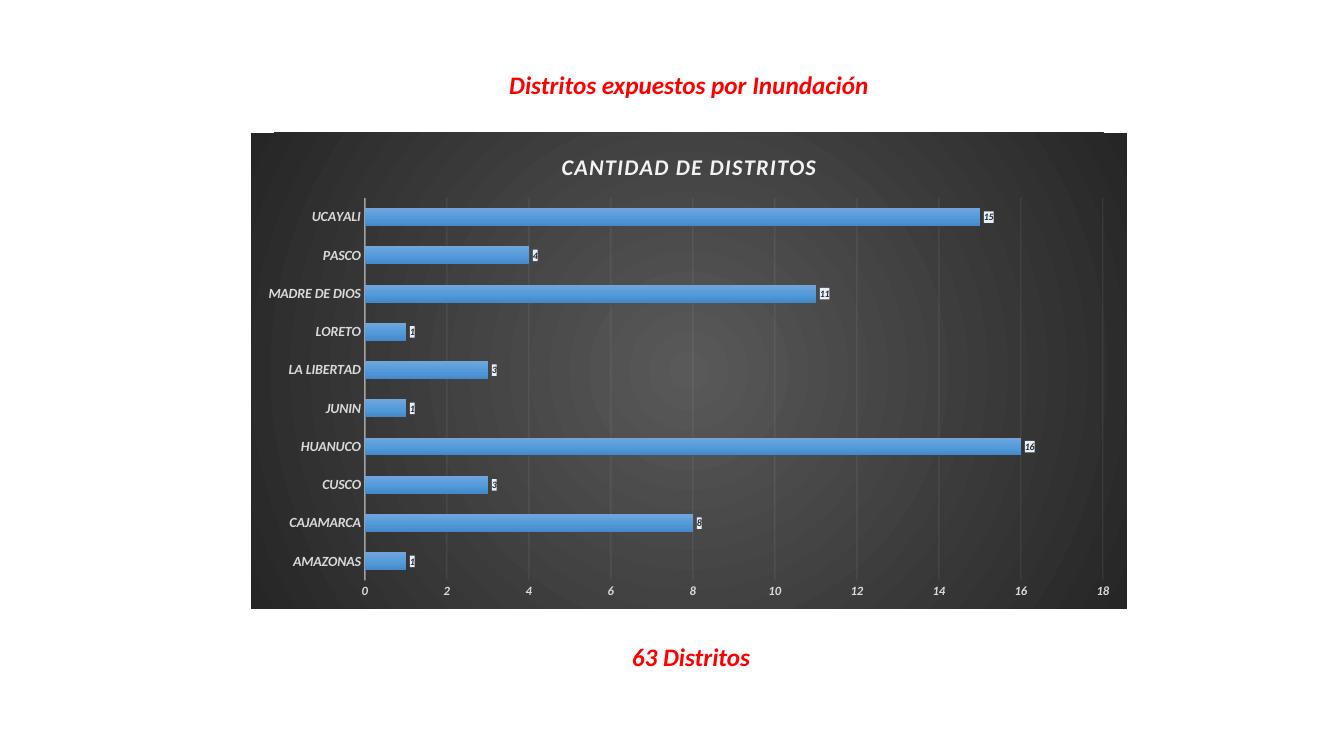
from lxml import etree
from pptx import Presentation
from pptx.chart.data import CategoryChartData
from pptx.dml.color import RGBColor
from pptx.enum.chart import XL_CHART_TYPE, XL_LABEL_POSITION, XL_TICK_MARK
from pptx.enum.text import MSO_ANCHOR, PP_ALIGN
from pptx.oxml import parse_xml
from pptx.oxml.ns import qn
from pptx.util import Pt

HEAD = "Distritos expuestos por Inundación"
TOTAL = "63 Distritos"
NAME = "CANTIDAD DE DISTRITOS"
COUNTS = {
    "AMAZONAS": 1, "CAJAMARCA": 8, "CUSCO": 3, "HUANUCO": 16, "JUNIN": 1,
    "LA LIBERTAD": 3, "LORETO": 1, "MADRE DE DIOS": 11, "PASCO": 4,
    "UCAYALI": 15,
}

FACE = "Calibri"
RED = RGBColor(0xFF, 0, 0)
PALE = RGBColor(0xF2, 0xF2, 0xF2)
GREY = RGBColor(0xD9, 0xD9, 0xD9)
NAVY = RGBColor(0x22, 0x2A, 0x35)
TAG = RGBColor(0xE9, 0xEF, 0xF8)
BARS = [(0, RGBColor(0x71, 0xA6, 0xDB)), (50, RGBColor(0x55, 0x9B, 0xDB)),
        (100, RGBColor(0x44, 0x8A, 0xCA))]
BACK = [(0, RGBColor(0x59, 0x59, 0x59)), (100, RGBColor(0x26, 0x26, 0x26))]
DOWN = '<a:lin ang="5400000" scaled="0"/>'
ROUND = ('<a:path path="circle"><a:fillToRect l="50000" t="50000" '
         'r="50000" b="50000"/></a:path>')

CENTER, MIDDLE = PP_ALIGN.CENTER, MSO_ANCHOR.MIDDLE
BAR, OUTER = XL_CHART_TYPE.BAR_CLUSTERED, XL_LABEL_POSITION.OUTSIDE_END
NONE = XL_TICK_MARK.NONE
SPACES = ('xmlns:a="http://schemas.openxmlformats.org/drawingml/2006/main" '
          'xmlns:c="http://schemas.openxmlformats.org/drawingml/2006/chart"')


def style(font, size, color):
    font.name, font.size = FACE, Pt(size)
    font.bold = font.italic = True
    font.color.rgb = color


def write(shape, text, wrap):
    frame = shape.text_frame
    frame.text, frame.word_wrap = text, wrap
    frame.vertical_anchor = MIDDLE
    para = frame.paragraphs[0]
    para.alignment = CENTER
    style(para.font, 18, RED)


def box(fill):
    """Shape properties with a fill and no outline."""
    return parse_xml(f"<c:spPr {SPACES}>{fill}<a:ln><a:noFill/></a:ln></c:spPr>")


def blend(stops, way):
    marks = "".join(f'<a:gs pos="{at * 1000}"><a:srgbClr val="{color}"/></a:gs>'
                    for at, color in stops)
    return f"<a:gradFill><a:gsLst>{marks}</a:gsLst>{way}</a:gradFill>"


def rule(line, axis, width, alpha):
    """Draw a pale, partly transparent line on an axis."""
    line.width, line.color.rgb = Pt(width), PALE
    for color in axis._element.xpath(".//a:ln//a:srgbClr"):
        etree.SubElement(color, qn("a:alpha")).set("val", str(alpha * 1000))


def add_bars(slide):
    data = CategoryChartData(number_format="#,##0")
    data.categories = list(COUNTS)
    data.add_series(NAME, list(COUNTS.values()))
    chart = slide.shapes.add_chart(
        BAR, Pt(179.3), Pt(95), Pt(625.7), Pt(339.8), data).chart
    chart.font.name, chart.font.size = FACE, Pt(10)
    chart.has_legend = False
    space = chart._chartSpace
    space.find(qn("c:chart")).addnext(box(blend(BACK, ROUND)))

    chart.has_title = True
    frame = chart.chart_title.text_frame
    frame.text = NAME
    font = frame.paragraphs[0].runs[0].font
    style(font, 16, PALE)
    font._element.set("spc", "100")
    chart.chart_title.include_in_layout = False

    cats, vals = chart.category_axis, chart.value_axis
    for axis, size in ((cats, 10), (vals, 9)):
        axis.major_tick_mark = axis.minor_tick_mark = NONE
        style(axis.tick_labels.font, size, GREY)
    rule(cats.format.line, cats, 1, 54)
    vals.minimum_scale, vals.maximum_scale, vals.major_unit = 0, 18, 2
    rule(vals.major_gridlines.format.line, vals, 0.75, 10)
    vals.format.line.fill.background()

    plot = chart.plots[0]
    plot.gap_width, plot.overlap, plot.vary_by_categories = 115, -20, False
    bars = plot.series[0]
    bars.invert_if_negative = False
    old = bars._element.get_or_add_spPr()
    old.getparent().replace(old, box(blend(BARS, DOWN)))

    labels = bars.data_labels
    labels.show_value, labels.position = True, OUTER
    labels.number_format, labels.number_format_is_linked = "#,##0", False
    style(labels.font, 7, NAVY)
    tag = f'<a:solidFill><a:srgbClr val="{TAG}"/></a:solidFill>'
    labels._element.find(qn("c:txPr")).addprevious(box(tag))


def main():
    deck = Presentation()
    deck.slide_width, deck.slide_height = Pt(960), Pt(540)
    slide = deck.slides.add_slide(deck.slide_layouts[5])
    title = slide.shapes.title
    title.left, title.top = Pt(355), Pt(46.1)
    title.width, title.height = Pt(274.3), Pt(28.8)
    write(title, HEAD, False)
    add_bars(slide)
    total = slide.shapes.add_textbox(Pt(437.8), Pt(454.3), Pt(111.6), Pt(28.8))
    write(total, TOTAL, True)
    deck.save("out.pptx")


if __name__ == "__main__":
    main()
